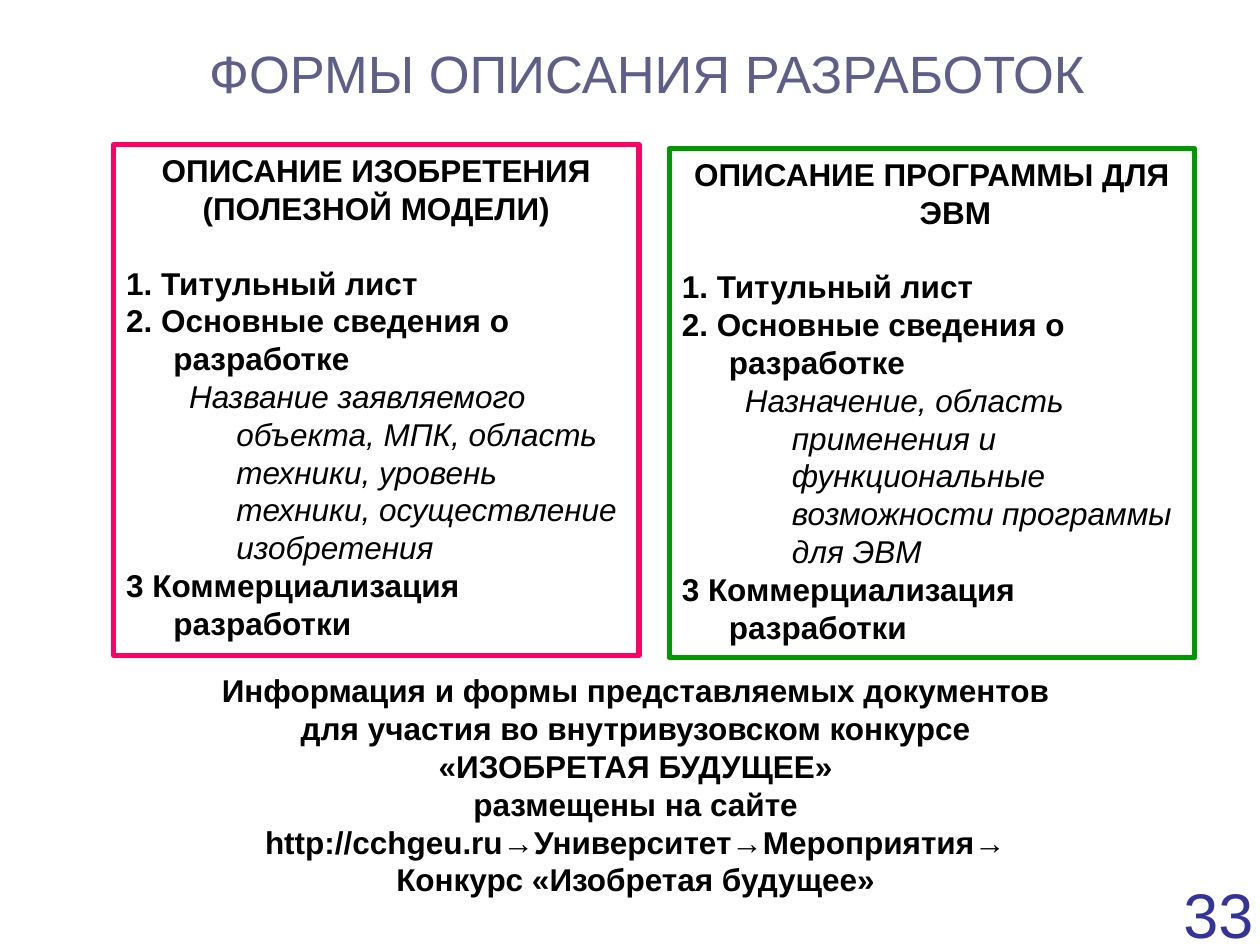
from lxml.etree import SubElement
from pptx import Presentation
from pptx.dml.color import RGBColor
from pptx.enum.text import MSO_ANCHOR, MSO_AUTO_SIZE, PP_ALIGN
from pptx.oxml.ns import qn
from pptx.util import Cm, Pt

BLACK = RGBColor(0, 0, 0)
PINK = RGBColor(0xFF, 0, 0x66)
GREEN = RGBColor(0, 0x99, 0)
SLATE = RGBColor(0x5E, 0x5F, 0x88)
BLUE = RGBColor(0x33, 0x33, 0x99)


class Deck:
    """Holds the text style and the current slide."""

    face = "Arial"
    size = 18
    hang = 0.95
    step = 1.27

    def __init__(self, slide):
        self.slide = slide

    def place(self, shape, area, anchor=MSO_ANCHOR.TOP, wrap=True):
        shape.left, shape.top, shape.width, shape.height = map(Cm, area)
        frame = shape.text_frame
        frame.word_wrap = wrap
        frame.auto_size = MSO_AUTO_SIZE.NONE
        frame.vertical_anchor = anchor
        return frame

    def style(self, par, text, size=size, color=BLACK, bold=False,
              italic=False, align=PP_ALIGN.CENTER):
        par.text = text
        par.alignment = align
        font = par.font
        font.name, font.size = self.face, Pt(size)
        font.bold, font.italic = bold, italic
        font.color.rgb = color

    def title(self, text, area):
        frame = self.place(self.slide.shapes.title, area, MSO_ANCHOR.MIDDLE)
        self.style(frame.paragraphs[0], text, 30, SLATE)

    def label(self, lines, area, wrap=True, **look):
        box = self.slide.shapes.add_textbox(0, 0, 0, 0)
        frame = self.place(box, area, wrap=wrap)
        for num, line in enumerate(lines):
            par = frame.add_paragraph() if num else frame.paragraphs[0]
            self.style(par, line, **look)

    def item(self, par, text, level=0, gap=0, **look):
        par.level = level
        props = par._p.get_or_add_pPr()
        props.set("marL", str(Cm(self.hang + level * self.step)))
        props.set("indent", str(-Cm(self.hang)))
        SubElement(props, qn("a:buNone"))
        par.space_before = Pt(gap)
        self.style(par, text, **look)

    def panel(self, slot, area, color, heads, detail):
        shape = self.slide.placeholders[slot]
        shape.line.color.rgb = color
        shape.line.width = Pt(3)
        frame = self.place(shape, area)
        for num, head in enumerate(heads):
            par = frame.add_paragraph() if num else frame.paragraphs[0]
            self.item(par, head, bold=True)
        rows = [("1. Титульный лист", 0), ("2. Основные сведения о разработке", 0),
                (detail, 1), ("3 Коммерциализация разработки", 0)]
        for num, (text, level) in enumerate(rows):
            self.item(frame.add_paragraph(), text, level, 0 if num else 21,
                      bold=not level, italic=bool(level), align=PP_ALIGN.LEFT)


def main():
    show = Presentation()
    show.slide_width, show.slide_height = Cm(25.4), Cm(19.05)
    deck = Deck(show.slides.add_slide(show.slide_layouts[3]))
    deck.title("ФОРМЫ ОПИСАНИЯ РАЗРАБОТОК ", (2.49, 0.71, 21.41, 1.52))
    deck.panel(1, (2.29, 2.92, 10.59, 10.29), PINK,
               ["ОПИСАНИЕ ИЗОБРЕТЕНИЯ", "(ПОЛЕЗНОЙ МОДЕЛИ)"],
               "Название заявляемого объекта, МПК, область техники, "
               "уровень техники, осуществление изобретения")
    deck.panel(2, (13.49, 3, 10.59, 10.26), GREEN,
               ["ОПИСАНИЕ ПРОГРАММЫ ДЛЯ ЭВМ"],
               "Назначение, область применения и функциональные "
               "возможности программы для ЭВМ")
    deck.label(["Информация и формы представляемых документов для участия "
                "во внутривузовском конкурсе «ИЗОБРЕТАЯ БУДУЩЕЕ»\v"
                "размещены на сайте\v"
                "http://cchgeu.ru→Университет→Мероприятия→",
                "Конкурс «Изобретая будущее»"],
               (3.71, 13.41, 18.21, 4.88), bold=True)
    deck.label(["33"], (24.31, 17.53, 0.51, 0.97), wrap=False, size=36, color=BLUE)
    show.save("out.pptx")


if __name__ == "__main__":
    main()
